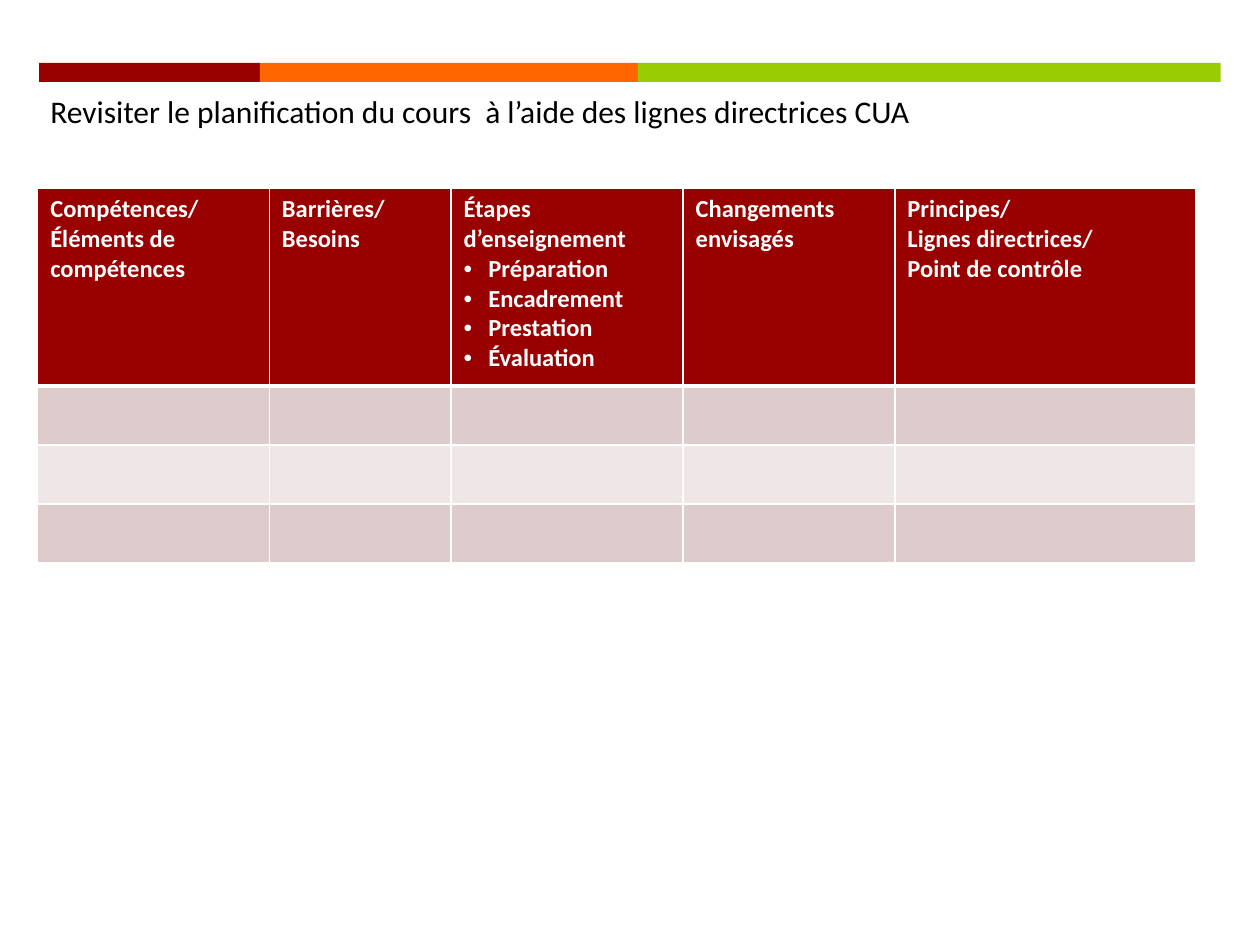
from lxml import etree
from pptx import Presentation
from pptx.dml.color import RGBColor
from pptx.enum.shapes import MSO_SHAPE
from pptx.enum.text import MSO_ANCHOR, MSO_AUTO_SIZE, PP_ALIGN
from pptx.oxml.ns import qn
from pptx.util import Cm, Pt

RECT = MSO_SHAPE.RECTANGLE
TOP = MSO_ANCHOR.TOP
LEFT = PP_ALIGN.LEFT
GROW = MSO_AUTO_SIZE.SHAPE_TO_FIT_TEXT

RED = RGBColor(0x99, 0x00, 0x00)
ORANGE = RGBColor(0xFF, 0x66, 0x00)
GREEN = RGBColor(0x99, 0xCC, 0x00)
ROSE = RGBColor(0xDE, 0xCC, 0xCC)
PALE = RGBColor(0xEF, 0xE7, 0xE7)
WHITE = RGBColor(0xFF, 0xFF, 0xFF)
BLACK = RGBColor(0x00, 0x00, 0x00)

TITLE = "Revisiter le planification du cours  à l’aide des lignes directrices CUA"
TITLE_FONT = {"name": "Calibri", "size": Pt(18), "bold": False}
HEAD_FONT = {"name": "Calibri", "size": Pt(14), "bold": True}
FRAME = {"word_wrap": True, "vertical_anchor": TOP, "auto_size": GROW}

BANDS = [(4.45, RED), (7.62, ORANGE), (11.75, GREEN)]
COLS = [4.67, 3.66, 4.68, 4.27, 6.07]
ROWS = [3.99, 1.19, 1.19, 1.19]
FILLS = [RED, ROSE, PALE, ROSE]
HEADS = [
    ["Compétences/\vÉléments de compétences"],
    ["Barrières/Besoins"],
    ["Étapes d’enseignement", "• Préparation", "• Encadrement",
     "• Prestation", "• Évaluation"],
    ["Changements envisagés"],
    ["Principes/", "Lignes directrices/", "Point de contrôle"],
]


def style(item, values):
    for name, value in values.items():
        setattr(item, name, value)


def write(para, text, font, color):
    para.text = text
    para.alignment = LEFT
    for run in para.runs:
        style(run.font, font)
        run.font.color.rgb = color


def add_title(slide):
    title = slide.shapes.title
    style(title, {"left": Cm(0.76), "top": Cm(1.73),
                  "width": Cm(23.93), "height": Cm(1.02)})
    style(title.text_frame, FRAME)
    write(title.text_frame.paragraphs[0], TITLE, TITLE_FONT, BLACK)


def add_bands(slide):
    left = 0.79
    for width, color in BANDS:
        band = slide.shapes.add_shape(RECT, Cm(left), Cm(1.27), Cm(width), Cm(0.38))
        band.shadow.inherit = False
        band.fill.solid()
        band.fill.fore_color.rgb = color
        band.line.fill.background()
        left += width


def bullet(para):
    props = para._p.get_or_add_pPr()
    props.set("marL", str(Cm(0.5)))
    props.set("indent", str(-Cm(0.5)))
    etree.SubElement(props, qn("a:buFont"), typeface="Arial")
    etree.SubElement(props, qn("a:buChar"), char="•")


def border(cell, sides):
    props = cell._tc.get_or_add_tcPr()
    for side, width in sides.items():
        line = etree.SubElement(props, qn(f"a:ln{side}"), w=str(Pt(width)))
        fill = etree.SubElement(line, qn("a:solidFill"))
        etree.SubElement(fill, qn("a:srgbClr"), val=str(WHITE))


def fill_head(cell, lines):
    frame = cell.text_frame
    for i, text in enumerate(lines):
        para = frame.add_paragraph() if i else frame.paragraphs[0]
        write(para, text.removeprefix("• "), HEAD_FONT, WHITE)
        if text.startswith("• "):
            bullet(para)


def add_grid(slide):
    table = slide.shapes.add_table(
        len(ROWS), len(COLS), Cm(0.76), Cm(3.79), Cm(sum(COLS)), Cm(sum(ROWS))
    ).table
    for col, width in zip(table.columns, COLS):
        col.width = Cm(width)
    for i, (row, height) in enumerate(zip(table.rows, ROWS)):
        row.height = Cm(height)
        for cell in row.cells:
            border(cell, {"L": 1, "R": 1, "T": 3 if i == 1 else 1,
                          "B": 3 if i == 0 else 1})
            cell.fill.solid()
            cell.fill.fore_color.rgb = FILLS[i]
    for cell, lines in zip(table.rows[0].cells, HEADS):
        fill_head(cell, lines)


def main():
    deck = Presentation()
    style(deck, {"slide_width": Cm(25.4), "slide_height": Cm(19.05)})
    slide = deck.slides.add_slide(deck.slide_layouts[5])
    add_bands(slide)
    add_grid(slide)
    add_title(slide)
    deck.save("out.pptx")


if __name__ == "__main__":
    main()
